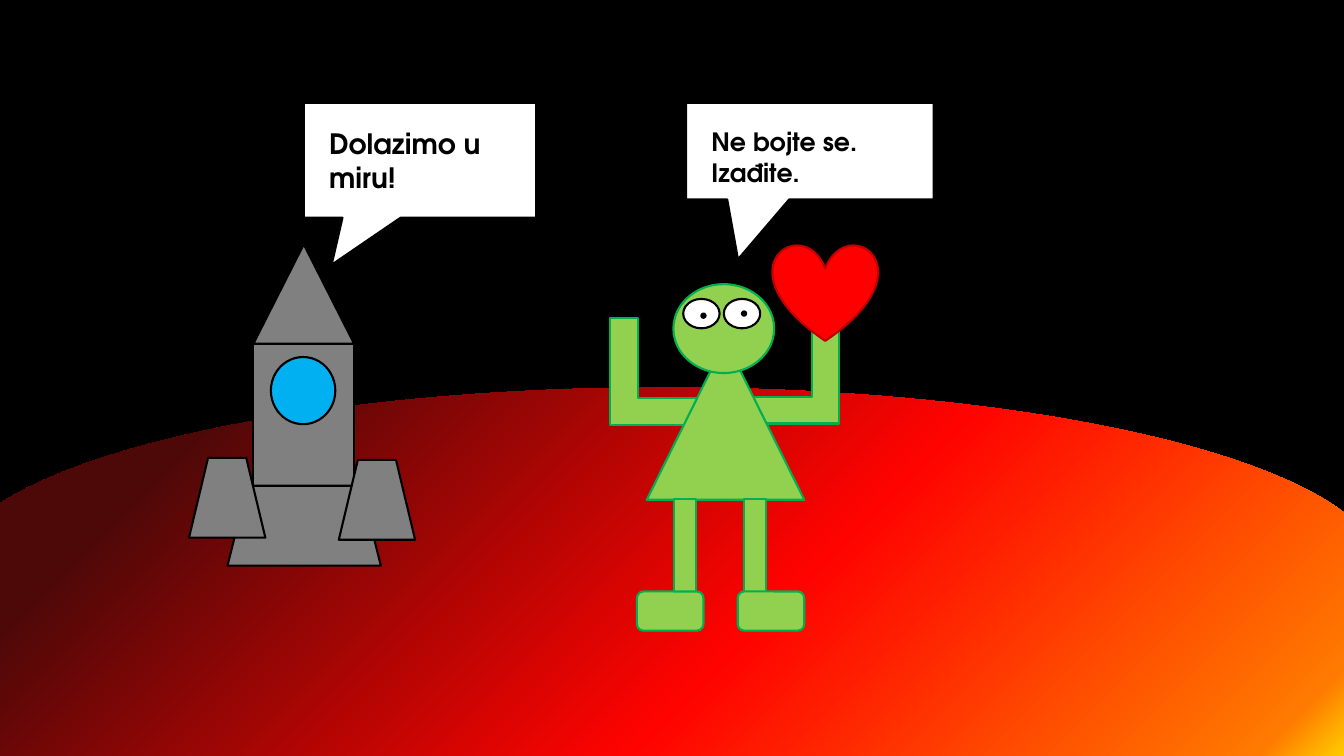
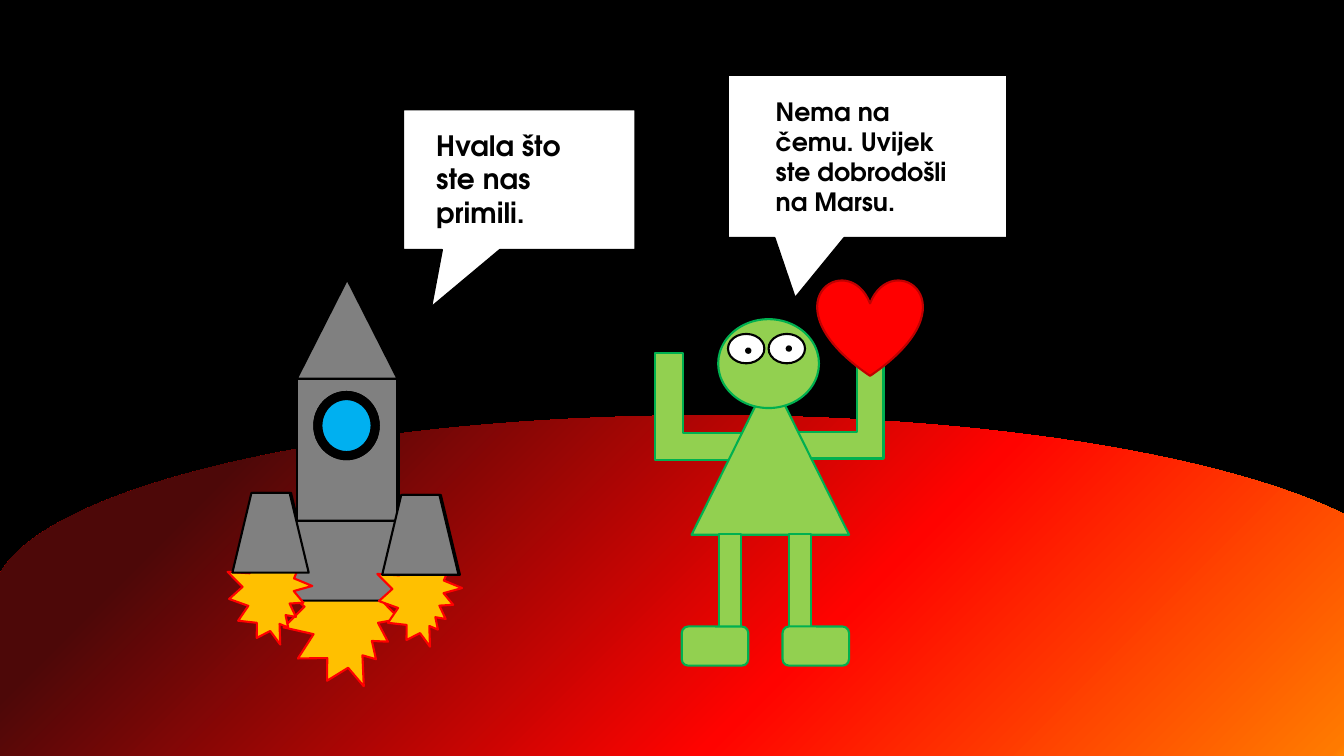
from dataclasses import dataclass

import lxml.etree
import pptx
import pptx.dml.color
import pptx.enum.shapes
import pptx.enum.text
import pptx.oxml.ns
import pptx.util

Pt = pptx.util.Pt
Kind = pptx.enum.shapes.MSO_SHAPE

# Shared look
COLOURS = {
    "space": "000000",
    "black": "000000",
    "white": "FFFFFF",
    "metal": "808080",
    "glass": "00B0F0",
    "skin": "92D050",
    "skin edge": "00B050",
    "heart": "FF0000",
    "heart edge": "C00000",
    "flame": "FFC000",
    "flame edge": "FF0000",
}
PLANET_STOPS = {0: "FFF200", 7: "FF7A00", 42: "FF0300", 84: "4D0808"}
FONT = "TeX Gyre Adventor"
LINE_WIDTH = 1.5


@dataclass(frozen=True)
class Piece:
    """One drawn piece of a figure, with lengths in points."""
    kind: Kind
    left: float
    top: float
    width: float
    height: float
    fill: str
    line: str = "black"
    rotation: float = 0
    adjustments: tuple[float, ...] = ()
    role: str = "body"


@dataclass(frozen=True)
class Bubble:
    """A speech bubble and the text box that lies on it."""
    box: tuple[float, float, float, float]
    pointer: tuple[float, float]
    text_box: tuple[float, float, float, float]
    text: str
    size: float


@dataclass(frozen=True)
class Figure:
    """A set of pieces moved by an offset."""
    pieces: list[Piece]
    offset: tuple[float, float] = (0, 0)


@dataclass(frozen=True)
class Scene:
    """The content of one slide."""
    planet_offset: tuple[float, float]
    figures: list[Figure]
    bubbles: list[Bubble]


def skin(kind: Kind, left: float, top: float, width: float, height: float,
         rotation: float = 0, adjustments: tuple[float, ...] = ()) -> Piece:
    return Piece(kind, left, top, width, height, "skin", "skin edge",
                 rotation, adjustments)


def metal(kind: Kind, left: float, top: float, width: float,
          height: float) -> Piece:
    return Piece(kind, left, top, width, height, "metal")


def flame(left: float, top: float, width: float, height: float,
          rotation: float) -> Piece:
    return Piece(Kind.EXPLOSION2, left, top, width, height, "flame",
                 "flame edge", rotation, role="flame")


# Rocket, from back to front
WINDOW = (193.5, 255, 46, 48)
ROCKET = [
    metal(Kind.RECTANGLE, 181, 245.5, 72, 135),
    flame(163.5, 348, 107.5, 111, 321.5),
    metal(Kind.TRAPEZOID, 162.5, 347, 109.5, 57),
    flame(236, 356.5, 66, 77, 325.2),
    metal(Kind.TRAPEZOID, 242, 328.5, 54.5, 57),
    flame(129, 355, 66, 77, 325.2),
    metal(Kind.TRAPEZOID, 135, 327, 54.5, 57),
    metal(Kind.FLOWCHART_EXTRACT, 181, 174.5, 72, 71),
    Piece(Kind.OVAL, *WINDOW, "glass", role="window"),
    Piece(Kind.DONUT, *WINDOW, "black", adjustments=(0.11,), role="ring"),
]

# Alien, from back to front
ARM_BEND = (0.25, 0.25, 0)
ALIEN = [
    skin(Kind.BENT_UP_ARROW, 533, 224, 75.5, 78.5, 0, ARM_BEND),
    skin(Kind.BENT_UP_ARROW, 432, 231, 86.5, 78.5, 90, ARM_BEND),
    skin(Kind.FLOWCHART_EXTRACT, 462, 243.5, 112.5, 113.5),
    skin(Kind.OVAL, 481, 203, 72, 63.5),
    *(Piece(Kind.OVAL, left, 213.5, 26, 21, "white") for left in (488, 517)),
    *(Piece(Kind.OVAL, left, top, 3, 3, "black")
      for left, top in ((501, 224), (530, 222.5))),
    *(skin(Kind.RECTANGLE, left, 356.5, 16, 80.5) for left in (481.5, 531.5)),
    *(skin(Kind.ROUNDED_RECTANGLE, left, 422.5, 47.5, 28)
      for left in (455, 527)),
    Piece(Kind.HEART, 552, 174.5, 75, 69, "heart", "heart edge"),
]


def rocket_pieces(*roles: str) -> list[Piece]:
    return [piece for piece in ROCKET if piece.role in roles]


SCENES = [
    Scene(
        (0, 0),
        [Figure(rocket_pieces("body", "window")), Figure(ALIEN)],
        [
            Bubble((217, 73.5, 166, 82), (-0.38, 0.91),
                   (228, 87, 134, 55.5), "Dolazimo u miru!", 20),
            Bubble((490, 73.5, 177, 69), (-0.29, 1.12),
                   (501, 87, 146, 51), "Ne bojte se. Izađite.", 18),
        ],
    ),
    Scene(
        (31.5, 20),
        [
            Figure(rocket_pieces("body"), (32, 25)),
            Figure(ALIEN, (32, 25)),
            Figure(ROCKET, (31, 25)),
        ],
        [
            Bubble((288, 78, 166, 100.5), (-0.38, 0.91),
                   (304.5, 88, 134, 80), "Hvala što ste nas primili.", 20),
            Bubble((520, 53.5, 199.5, 116.5), (-0.26, 0.87),
                   (547, 65, 146, 94.5),
                   "Nema na čemu. Uvijek ste dobrodošli na Marsu.", 18),
        ],
    ),
]


def colour(name: str) -> pptx.dml.color.RGBColor:
    return pptx.dml.color.RGBColor.from_string(COLOURS[name])


def draw_piece(shapes, piece: Piece, offset: tuple[float, float] = (0, 0)):
    shape = shapes.add_shape(
        piece.kind, Pt(piece.left + offset[0]), Pt(piece.top + offset[1]),
        Pt(piece.width), Pt(piece.height))
    shape.shadow.inherit = False
    shape.rotation = piece.rotation
    for index, value in enumerate(piece.adjustments):
        shape.adjustments[index] = value
    shape.fill.solid()
    shape.fill.fore_color.rgb = colour(piece.fill)
    shape.line.color.rgb = colour(piece.line)
    shape.line.width = Pt(LINE_WIDTH)
    return shape


def draw_planet(slide, offset: tuple[float, float]) -> None:
    planet = draw_piece(
        slide.shapes,
        Piece(Kind.FLOWCHART_DELAY, 343.5, -103.5, 263.5, 1024, "heart",
              rotation=270),
        offset)
    planet.line.fill.background()
    planet.fill.gradient()
    planet.fill.gradient_angle = 135
    # Own colour stops; the gradient keeps its direction on the slide
    qualified = pptx.oxml.ns.qn
    gradient = planet.element.spPr.find(qualified("a:gradFill"))
    gradient.set("rotWithShape", "0")
    stops = gradient.find(qualified("a:gsLst"))
    for old_stop in list(stops):
        stops.remove(old_stop)
    for percent, value in PLANET_STOPS.items():
        stop = lxml.etree.SubElement(stops, qualified("a:gs"),
                                     pos=str(percent * 1000))
        lxml.etree.SubElement(stop, qualified("a:srgbClr"), val=value)


def draw_figure(slide, figure: Figure) -> None:
    group = slide.shapes.add_group_shape()
    for piece in figure.pieces:
        draw_piece(group.shapes, piece, figure.offset)


def draw_bubble(slide, bubble: Bubble) -> None:
    group = slide.shapes.add_group_shape()
    draw_piece(group.shapes, Piece(Kind.RECTANGULAR_CALLOUT, *bubble.box,
                                   "white", adjustments=bubble.pointer))
    text_box = group.shapes.add_textbox(*map(Pt, bubble.text_box))
    frame = text_box.text_frame
    frame.word_wrap = True
    frame.auto_size = pptx.enum.text.MSO_AUTO_SIZE.SHAPE_TO_FIT_TEXT
    run = frame.paragraphs[0].add_run()
    run.text = bubble.text
    text_format = {"name": FONT, "size": Pt(bubble.size), "bold": True}
    for attribute, value in text_format.items():
        setattr(run.font, attribute, value)
    run.font.color.rgb = colour("black")


def draw_scene(presentation, scene: Scene) -> None:
    slide = presentation.slides.add_slide(presentation.slide_layouts[6])
    slide.background.fill.solid()
    slide.background.fill.fore_color.rgb = colour("space")
    draw_planet(slide, scene.planet_offset)
    for figure in scene.figures:
        draw_figure(slide, figure)
    for bubble in scene.bubbles:
        draw_bubble(slide, bubble)


def main() -> None:
    presentation = pptx.Presentation()
    presentation.slide_width = Pt(960)
    presentation.slide_height = Pt(540)
    for scene in SCENES:
        draw_scene(presentation, scene)
    presentation.save("out.pptx")


if __name__ == "__main__":
    main()
